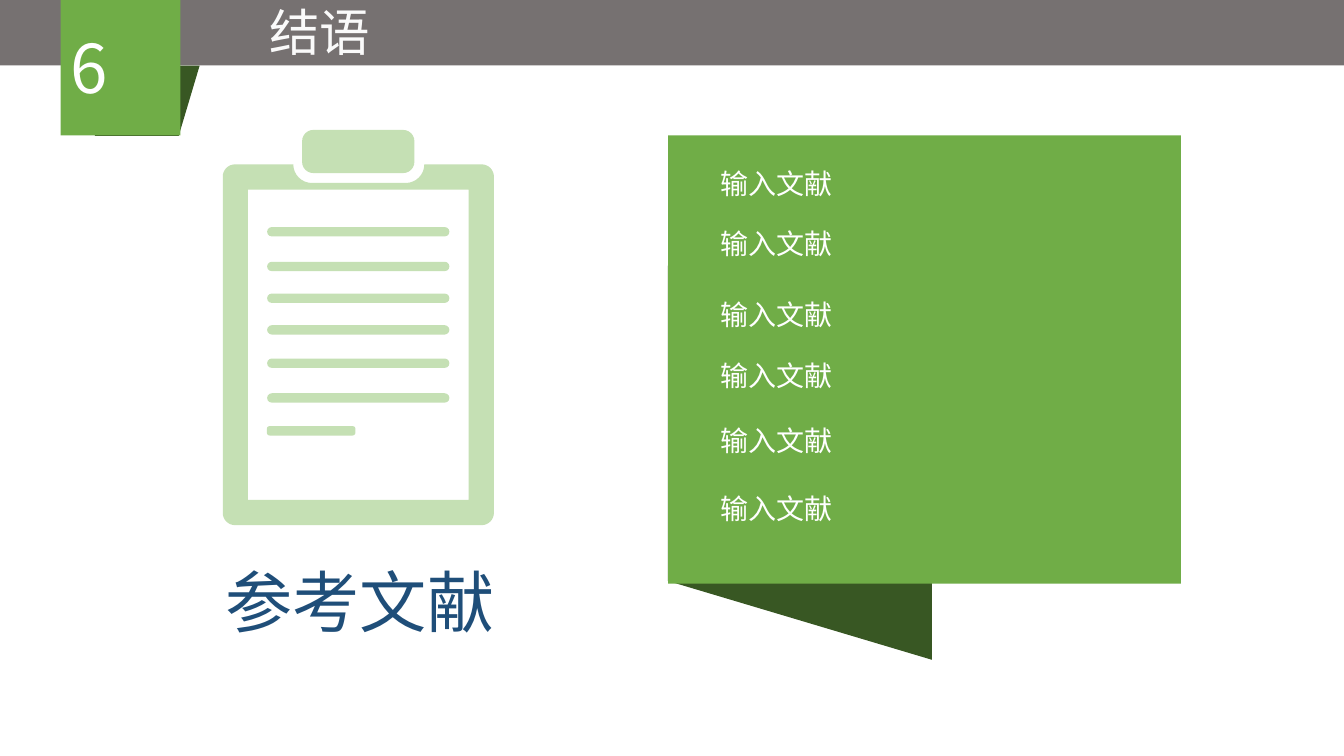
import math

import pptx
import pptx.util
import pptx.oxml
import pptx.oxml.ns
import pptx.dml.color
import pptx.enum.shapes
import pptx.enum.text

Pt = pptx.util.Pt
SHAPE = pptx.enum.shapes.MSO_SHAPE
ALIGN = pptx.enum.text.PP_ALIGN
ANCHOR = pptx.enum.text.MSO_ANCHOR
AUTO = pptx.enum.text.MSO_AUTO_SIZE

COLORS = {
    "bar": "767171",
    "title": "FAFAFA",
    "white": "FFFFFF",
    "green": "70AD47",
    "fold": "385723",
    "clipboard": "C5E0B4",
    "caption": "1F4E79",
}
CJK = "Noto Sans CJK SC"


def arc(cx, cy, r, start, sweep, steps=8):
    angles = [math.radians(start + sweep * i / steps) for i in range(steps + 1)]
    return [(cx + r * math.cos(a), cy + r * math.sin(a)) for a in angles]


class Deck:
    def __init__(self, prs):
        self.prs = prs
        self.s = prs.slides.add_slide(prs.slide_layouts[5])

    def color(self, name):
        return pptx.dml.color.RGBColor.from_string(COLORS[name])

    def paint(self, sp, color):
        sp.shadow.inherit = False
        sp.fill.solid()
        sp.fill.fore_color.rgb = self.color(color)
        sp.line.fill.background()
        return sp

    def shape(self, kind, box, color, rotation=0, corner=None):
        sp = self.s.shapes.add_shape(kind, *map(Pt, box))
        sp.rotation = rotation
        if corner is not None:
            sp.adjustments[0] = corner
        return self.paint(sp, color)

    def outline(self, contours, color):
        contours = [[(Pt(x), Pt(y)) for x, y in c] for c in contours]
        fb = self.s.shapes.build_freeform(*contours[0][0])
        fb.add_line_segments(contours[0][1:], close=True)
        for contour in contours[1:]:
            fb.move_to(*contour[0])
            fb.add_line_segments(contour[1:], close=True)
        return self.paint(fb.convert_to_shape(), color)

    def fill_text(self, sp, text, size, color, font=CJK, align=ALIGN.LEFT, **frame):
        tf = sp.text_frame
        for key, value in {"word_wrap": True, **frame}.items():
            setattr(tf, key, value)
        p = tf.paragraphs[0]
        p.alignment = align
        r = p.add_run()
        r.text = text
        for key, value in {"size": Pt(size), "name": font, "bold": False}.items():
            setattr(r.font, key, value)
        r.font.color.rgb = self.color(color)
        ea = pptx.oxml.parse_xml(f'<a:ea {pptx.oxml.ns.nsdecls("a")} typeface="{font}"/>')
        r.font._element.append(ea)

    def text(self, box, text, size, color):
        sp = self.s.shapes.add_textbox(*map(Pt, box))
        self.fill_text(sp, text, size, color, auto_size=AUTO.SHAPE_TO_FIT_TEXT)

    def title(self, box, text, size, color):
        sp = self.s.shapes.title
        for key, value in zip(("left", "top", "width", "height"), box):
            setattr(sp, key, Pt(value))
        self.s.shapes._spTree.append(sp._element)
        self.fill_text(sp, text, size, color, "Arial", ALIGN.CENTER,
                       vertical_anchor=ANCHOR.TOP, auto_size=AUTO.SHAPE_TO_FIT_TEXT)

    def vertical_label(self, sp, text, size, color):
        self.fill_text(sp, text, size, color, align=ALIGN.CENTER,
                       vertical_anchor=ANCHOR.MIDDLE)
        sp.text_frame._txBody.bodyPr.set("vert", "eaVert")

    def clipboard(self):
        left, top, right, bottom, r = 159.1, 117.4, 352.8, 375.1, 8.8
        notch_left, notch_right, notch_r = 209.5, 303.1, 13.3
        body = (
            arc(notch_right - notch_r, top, notch_r, 0, 90)
            + arc(notch_left + notch_r, top, notch_r, 90, 90)
            + arc(left + r, top + r, r, 270, -90)
            + arc(left + r, bottom - r, r, 180, -90)
            + arc(right - r, bottom - r, r, 90, -90)
            + arc(right - r, top + r, r, 0, -90)
        )
        paper = [(334.8, 357.1), (177.1, 357.1), (177.1, 135.4), (334.8, 135.4)]
        self.outline([body, paper], "clipboard")
        self.shape(SHAPE.ROUNDED_RECTANGLE, (215.8, 92.8, 80.2, 30.8), "clipboard", corner=0.26)
        for y in (162.2, 187, 209.7, 232.3, 256.1, 280.9):
            self.shape(SHAPE.ROUNDED_RECTANGLE, (190.8, y, 130.2, 6.7), "clipboard", corner=0.5)
        self.shape(SHAPE.ROUNDED_RECTANGLE, (190.6, 304.4, 63.3, 6.7), "clipboard", corner=0.3)


def main():
    prs = pptx.Presentation()
    prs.slide_width, prs.slide_height = Pt(960), Pt(540)
    deck = Deck(prs)

    deck.shape(SHAPE.RECTANGLE, (0, -0.7, 960, 47.4), "bar")
    deck.title((105.8, -2.9, 245.5, 50.4), "结语", 36, "title")

    deck.shape(SHAPE.FLOWCHART_DATA, (430.6, 236.2, 281.5, 188.6), "fold", 270)
    deck.shape(SHAPE.RECTANGLE, (477.2, 96.7, 366.4, 320.3), "green")
    for y in (115.2, 158.6, 208.8, 252.8, 298.8, 347.2):
        deck.text((507.6, y, 365, 31), "输入文献", 20, "white")

    deck.clipboard()
    deck.text((154.1, 396.7, 220.3, 64.8), "参考文献", 48, "caption")

    deck.shape(SHAPE.FLOWCHART_DATA, (67.7, 46.8, 74.9, 50.2), "fold", 180)
    badge = deck.shape(SHAPE.RECTANGLE, (37.2, 5, 97.9, 85.5), "green", 270)
    deck.vertical_label(badge, "6", 48, "white")

    prs.save("out.pptx")


if __name__ == "__main__":
    main()
